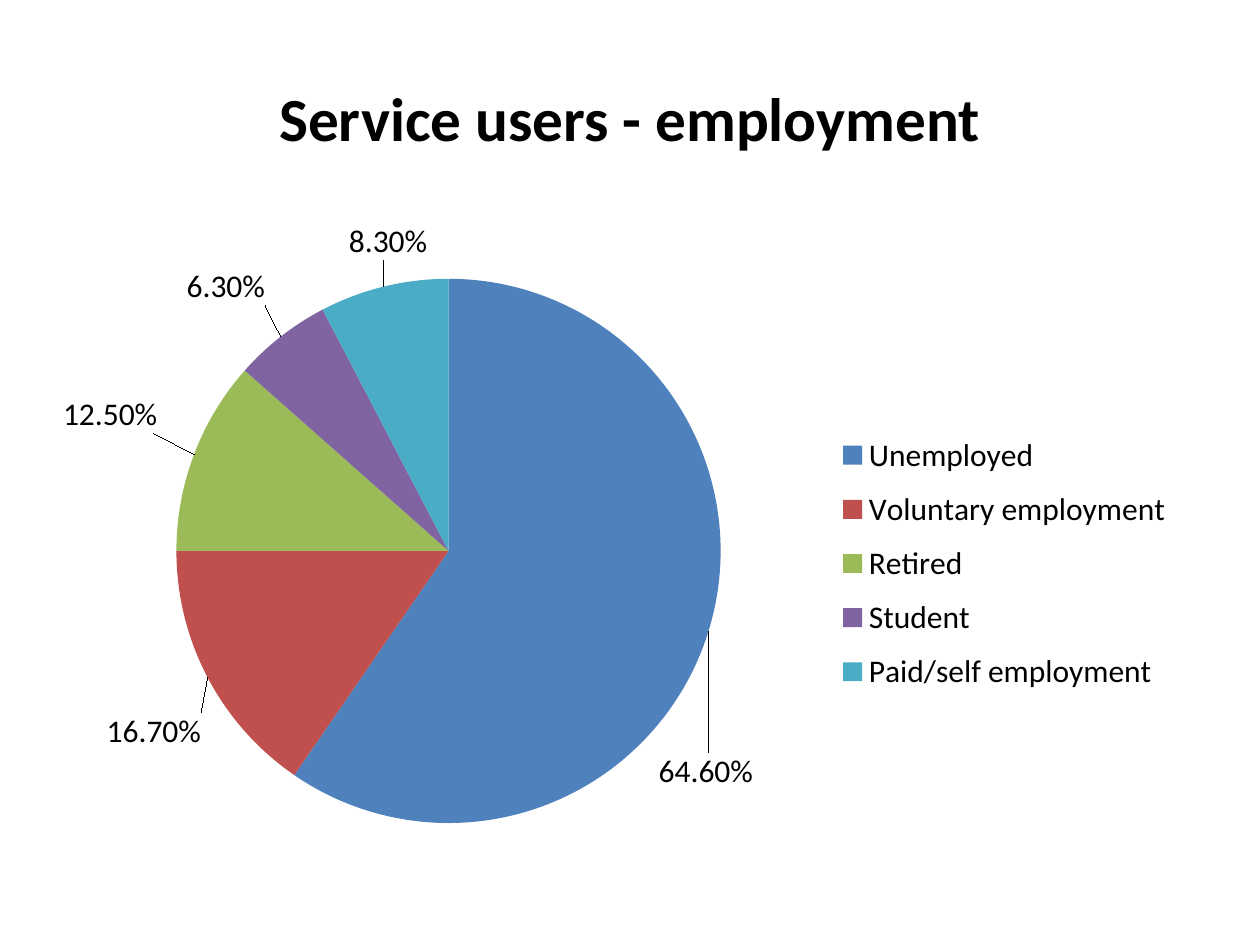
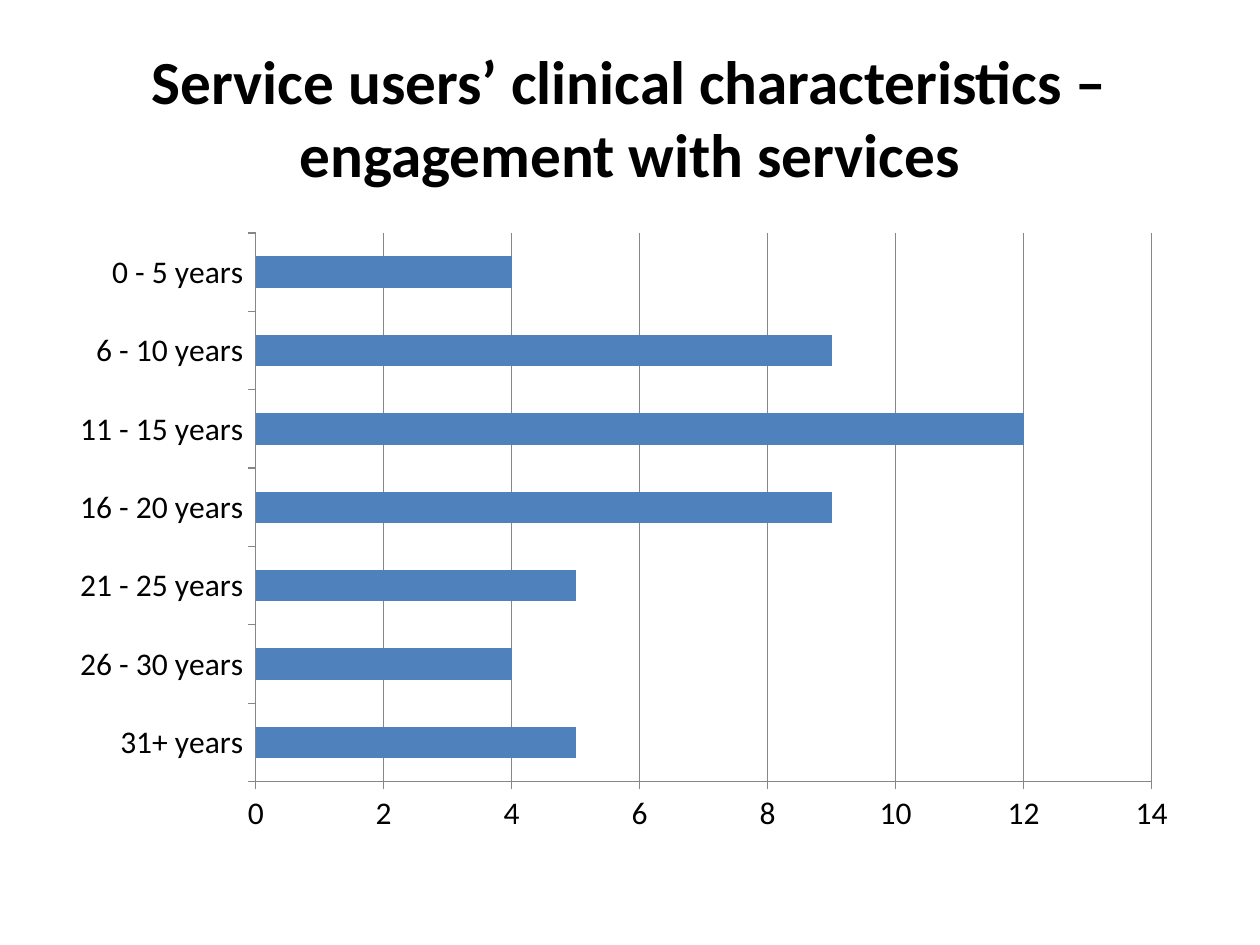
from lxml import etree
from pptx import Presentation
from pptx.chart.data import CategoryChartData
from pptx.dml.color import RGBColor
from pptx.enum.chart import (XL_CHART_TYPE, XL_LABEL_POSITION,
                             XL_LEGEND_POSITION, XL_TICK_MARK)
from pptx.enum.text import MSO_ANCHOR, MSO_AUTO_SIZE, PP_ALIGN
from pptx.oxml.ns import qn
from pptx.util import Pt

PIE, BAR = XL_CHART_TYPE.PIE, XL_CHART_TYPE.BAR_CLUSTERED
OUTER = XL_LABEL_POSITION.OUTSIDE_END
RIGHT = XL_LEGEND_POSITION.RIGHT
TICK = XL_TICK_MARK.OUTSIDE
CENTER, MIDDLE = PP_ALIGN.CENTER, MSO_ANCHOR.MIDDLE
NO_FIT = MSO_AUTO_SIZE.NONE

BLACK = RGBColor(0x00, 0x00, 0x00)
GREY = RGBColor(0x86, 0x86, 0x86)
BLUE = RGBColor(0x4F, 0x81, 0xBD)
RED = RGBColor(0xC0, 0x50, 0x4D)
GREEN = RGBColor(0x9B, 0xBB, 0x59)
PURPLE = RGBColor(0x80, 0x64, 0xA2)
TEAL = RGBColor(0x4B, 0xAC, 0xC6)

FONT = "Calibri"
PX = 9144  # 100 px to the inch
TITLE_BOX = (50, 30, 900, 125)
CHART_BOX = (50, 175, 900, 495)

# Job status, share, slice colour, label shift as parts of the chart
JOBS = [
    ("Unemployed", 0.646, BLUE, (-0.05, 0.19)),
    ("Voluntary employment", 0.167, RED, (0, 0.05)),
    ("Retired", 0.125, GREEN, (-0.03, -0.03)),
    ("Student", 0.063, PURPLE, (-0.01, -0.04)),
    ("Paid/self employment", 0.083, TEAL, (0.04, -0.03)),
]

# Years with services, from the bottom bar up
YEARS = [
    ("31+ years", 5), ("26 - 30 years", 4), ("21 - 25 years", 5),
    ("16 - 20 years", 9), ("11 - 15 years", 12), ("6 - 10 years", 9),
    ("0 - 5 years", 4),
]


def scale(box):
    return [n * PX for n in box]


def style(font, size=18, color=BLACK, bold=False):
    font.name, font.size, font.bold = FONT, Pt(size), bold
    font.color.rgb = color


def write(frame, text, align=CENTER, anchor=MIDDLE, **look):
    frame.word_wrap = True
    frame.auto_size = NO_FIT
    frame.vertical_anchor = anchor
    par = frame.paragraphs[0]
    par.alignment = align
    run = par.add_run()
    run.text = text
    style(run.font, **look)


def lay_out(part, spot, inner=False, **sides):
    """Give a chart part a manual layout as its child number spot."""
    for old in part.findall(qn("c:layout")):
        part.remove(old)
    layout = etree.Element(qn("c:layout"))
    part.insert(spot, layout)
    manual = etree.SubElement(layout, qn("c:manualLayout"))
    tags = {"layoutTarget": "inner"} if inner else {}
    if "w" in sides:
        tags.update(xMode="edge", yMode="edge")
    tags.update(sides)
    for tag, val in tags.items():
        etree.SubElement(manual, qn("c:" + tag)).set("val", str(val))


class Deck:
    def __init__(self):
        self.prs = Presentation()
        self.prs.slide_width, self.prs.slide_height = scale((1000, 750))
        self.slide = None

    def page(self, title):
        self.slide = self.prs.slides.add_slide(self.prs.slide_layouts[5])
        head = self.slide.shapes.title
        head.left, head.top, head.width, head.height = scale(TITLE_BOX)
        write(head.text_frame, title, size=35, bold=True)

    def chart(self, kind, names, vals, form, **plot):
        data = CategoryChartData(number_format=form)
        data.categories = names
        data.add_series("Series 1", vals)
        frame = self.slide.shapes.add_chart(kind, *scale(CHART_BOX), data)
        chart = frame.chart
        chart.has_title = chart.has_legend = False
        style(chart.font)
        area = chart.element.find(".//" + qn("c:plotArea"))
        lay_out(area, 0, inner=True, **plot)
        return chart

    def pie(self, rows):
        names, vals, fills, shifts = zip(*rows)
        chart = self.chart(PIE, names, vals, "0.00%",
                           x=0.1, y=0.09, w=0.48, h=0.88)
        chart.plots[0].vary_by_categories = True
        slices = chart.plots[0].series[0]

        # Slices and their labels
        labels = slices.data_labels
        labels.show_value = True
        labels.number_format, labels.number_format_is_linked = "0.00%", False
        labels.position = OUTER
        for i, (fill, (x, y)) in enumerate(zip(fills, shifts)):
            point = slices.points[i]
            point.format.fill.solid()
            point.format.fill.fore_color.rgb = fill
            point.data_label.position = OUTER
        for label, (x, y) in zip(slices.data_labels._element.findall(
                qn("c:dLbl")), shifts):
            lay_out(label, 1, x=x, y=y)

        # Legend
        chart.has_legend = True
        chart.legend.position = RIGHT
        chart.legend.include_in_layout = False
        style(chart.legend.font)
        legend = chart.element.find(".//" + qn("c:legend"))
        lay_out(legend, 1, x=0.67, y=0.32, w=0.32, h=0.46)

    def bars(self, rows):
        names, vals = zip(*rows)
        chart = self.chart(BAR, names, vals, "General",
                           x=0.17, y=0.02, w=0.79, h=0.88)
        plot = chart.plots[0]
        plot.vary_by_categories = False
        plot.gap_width = 150
        fill = plot.series[0].format.fill
        fill.solid()
        fill.fore_color.rgb = BLUE

        # Axes and grid
        val = chart.value_axis
        val.minimum_scale, val.maximum_scale, val.major_unit = 0, 14, 2
        val.has_major_gridlines = True
        lines = [val.major_gridlines.format.line]
        for axis in (chart.category_axis, val):
            axis.major_tick_mark = TICK
            style(axis.tick_labels.font)
            lines.append(axis.format.line)
        for line in lines:
            line.color.rgb = GREY
            line.width = Pt(0.75)


def main():
    deck = Deck()
    deck.page("Service users - employment")
    deck.pie(JOBS)
    deck.page("Service users’ clinical characteristics – "
              "engagement with services")
    deck.bars(YEARS)
    deck.prs.save("out.pptx")


if __name__ == "__main__":
    main()
